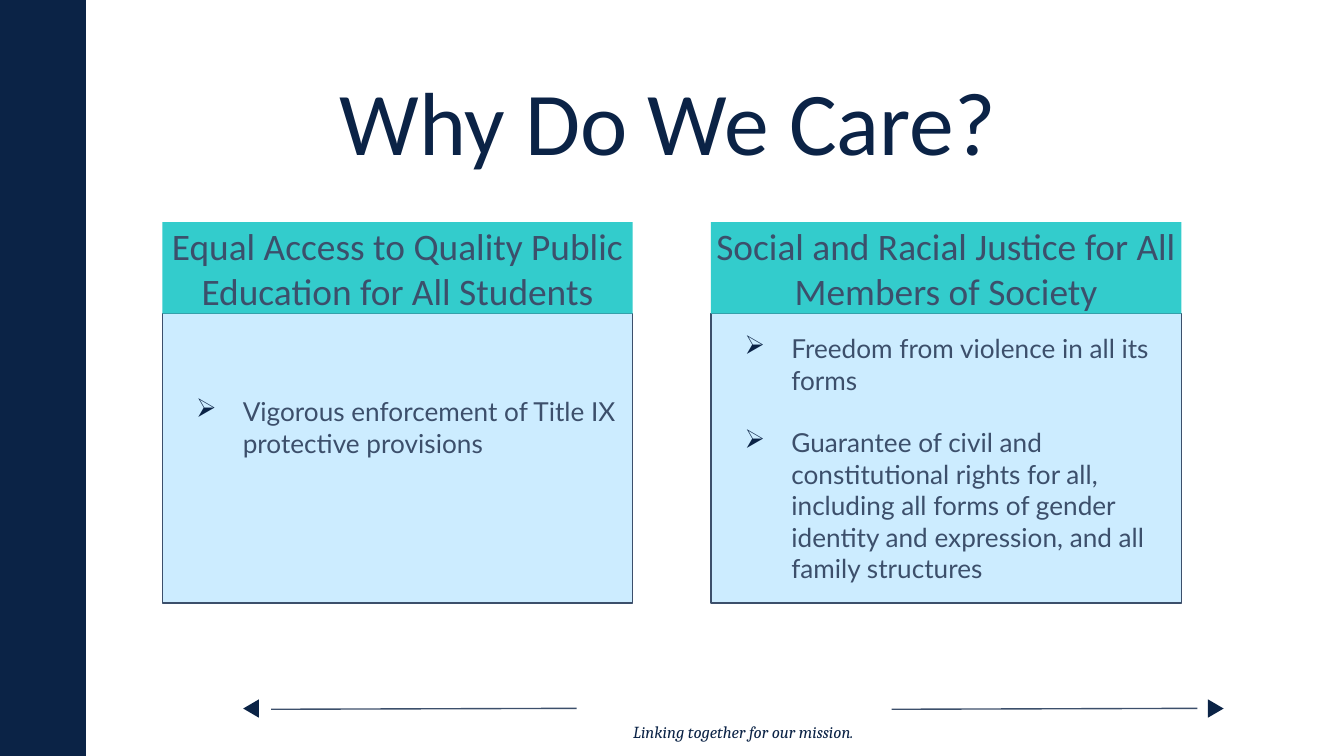
from dataclasses import dataclass

from lxml.etree import SubElement
from pptx import Presentation
from pptx.dml.color import RGBColor as RGB
from pptx.enum.shapes import MSO_CONNECTOR as LINE, MSO_SHAPE as SHAPE
from pptx.enum.text import MSO_ANCHOR as ANCHOR, MSO_AUTO_SIZE as FIT, PP_ALIGN as ALIGN
from pptx.oxml.ns import qn
from pptx.util import Pt


@dataclass(frozen=True)
class Theme:
    navy: RGB = RGB(0x0B, 0x23, 0x46)
    slate: RGB = RGB(0x3C, 0x4F, 0x6B)
    teal: RGB = RGB(0x33, 0xCC, 0xCC)
    pale_blue: RGB = RGB(0xCC, 0xEC, 0xFF)
    title: float = 48
    heading: float = 20
    body: float = 14
    motto: float = 9


theme = Theme()


def add_block(kind, left, top, width, height, fill, outline=None):
    block = slide.shapes.add_shape(kind, Pt(left), Pt(top), Pt(width), Pt(height))
    block.shadow.inherit = False
    block.fill.solid()
    block.fill.fore_color.rgb = fill
    if outline is None:
        block.line.fill.background()
    else:
        block.line.color.rgb = outline
        block.line.width = Pt(0.75)
    return block


def set_text(shape, lines, font, size, color, align, anchor, inset):
    """Fill the shape with one paragraph per line, all formatted alike."""
    frame = shape.text_frame
    frame.text = "\n".join(lines)
    frame.word_wrap = True
    frame.auto_size = FIT.NONE
    frame.vertical_anchor = anchor
    frame.margin_left = frame.margin_right = Pt(inset)
    frame.margin_top = frame.margin_bottom = Pt(inset)
    for paragraph in frame.paragraphs:
        paragraph.alignment = align
        for run in paragraph.runs:
            run.font.name = font
            run.font.size = Pt(size)
            run.font.color.rgb = color
    return frame


deck = Presentation()
deck.slide_width, deck.slide_height = Pt(720), Pt(405)
slide = deck.slides.add_slide(deck.slide_layouts[5])

# Side band and title
add_block(SHAPE.RECTANGLE, 0, 0, 46, 405, theme.navy)
title = slide.shapes.title
title.left, title.top, title.width, title.height = Pt(64.8), Pt(28), Pt(586), Pt(73.4)
set_text(title, ["Why Do We Care?"], "Calibri", theme.title, theme.navy,
         ALIGN.CENTER, ANCHOR.TOP, 7.2)

# Two reasons: heading above a bulleted panel
line_height = 16.8
reasons = [
    ("Equal Access to Quality Public Education for All Students",
     ["Vigorous enforcement of Title IX protective provisions"],
     2 * line_height),
    ("Social and Racial Justice for All Members of Society",
     ["Freedom from violence in all its forms",
      "Guarantee of civil and constitutional rights for all, including all forms "
      "of gender identity and expression, and all family structures"],
     0),
]
for column, (heading, points, room_below) in enumerate(reasons):
    left = 87 + column * 293.9
    panel = add_block(SHAPE.RECTANGLE, left, 168, 252, 155, theme.pale_blue, theme.slate)
    body = set_text(panel, points, "Lato", theme.body, theme.slate,
                    ALIGN.LEFT, ANCHOR.MIDDLE, 7.2)
    body.margin_bottom = Pt(7.2 + room_below)
    for number, point in enumerate(body.paragraphs):
        point.space_before = Pt(line_height if number else 0)
        properties = point._p.get_or_add_pPr()
        properties.set("marL", str(Pt(36)))
        properties.set("indent", str(Pt(-25)))
        bullet_color = SubElement(properties, qn("a:buClr"))
        SubElement(bullet_color, qn("a:srgbClr"), val=str(theme.navy))
        SubElement(properties, qn("a:buChar"), char="➢")

    banner = add_block(SHAPE.RECTANGLE, left, 119, 252, 49, theme.teal)
    set_text(banner, [heading], "Calibri", theme.heading, theme.slate,
             ALIGN.CENTER, ANCHOR.MIDDLE, 0)

# Footer: a rule and an outward triangle on each side of the motto
for rule_left, tip_left, turn in [(145.2, 129.6, 270), (477.7, 646.4, 90)]:
    rule = slide.shapes.add_connector(LINE.STRAIGHT, Pt(rule_left), Pt(380),
                                      Pt(rule_left + 163.7), Pt(379.5))
    rule.line.color.rgb = theme.slate
    rule.line.width = Pt(0.75)
    SubElement(rule._element.spPr, qn("a:effectLst"))
    tip = add_block(SHAPE.ISOSCELES_TRIANGLE, tip_left, 375.4, 9.8, 8.4, theme.navy)
    tip.rotation = turn

motto = slide.shapes.add_textbox(Pt(323.3), Pt(379.4), Pt(149.8), Pt(25.2))
words = set_text(motto, ["Linking together for our mission."], "Cambria", theme.motto,
                 theme.navy, ALIGN.CENTER, ANCHOR.TOP, 7.2)
words.paragraphs[0].runs[0].font.italic = True

deck.save("out.pptx")
